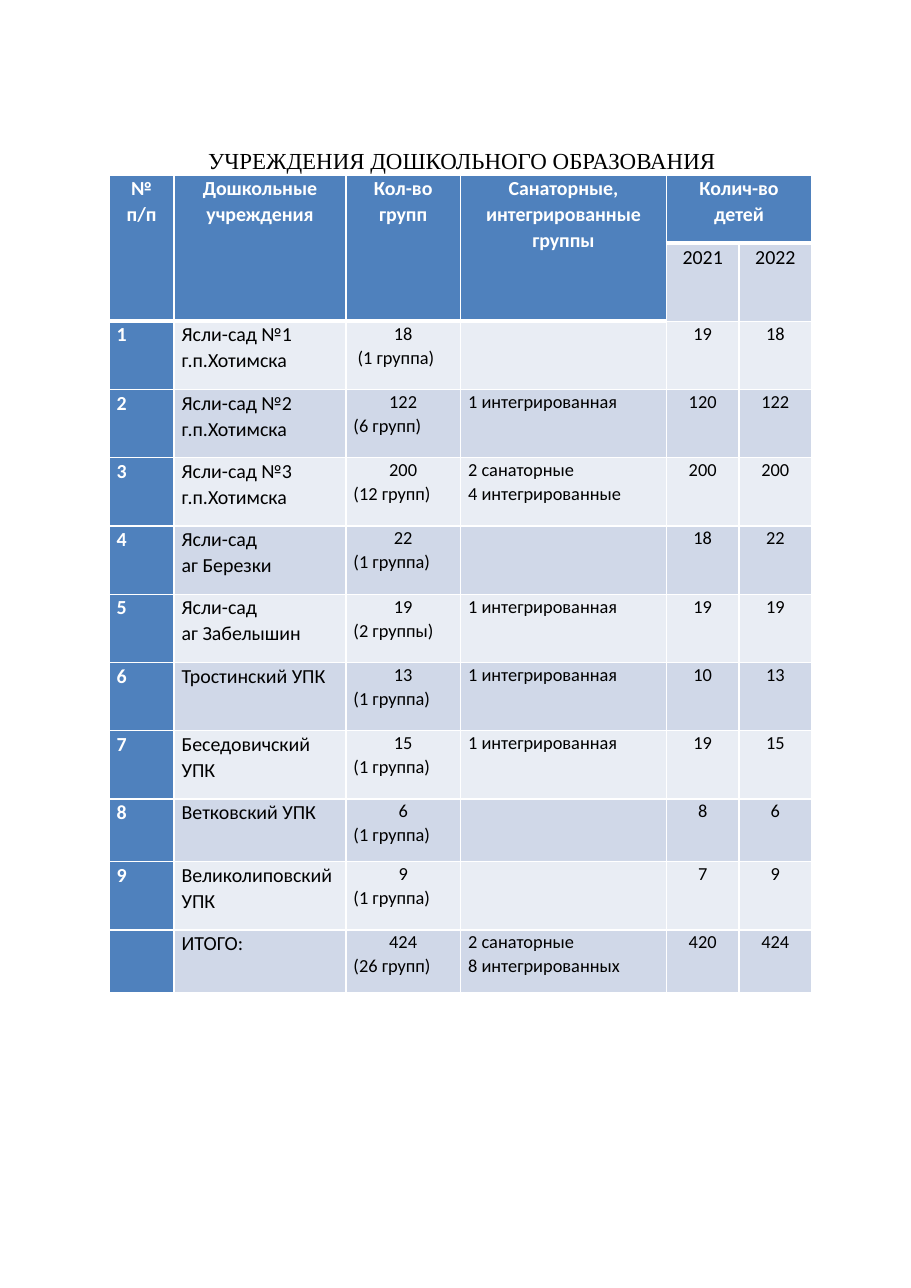
from lxml.etree import SubElement
from pptx import Presentation
from pptx.dml.color import RGBColor
from pptx.enum.text import MSO_ANCHOR, PP_ALIGN
from pptx.oxml.ns import qn
from pptx.util import Pt

WHITE = RGBColor(0xFF, 0xFF, 0xFF)
BLACK = RGBColor(0, 0, 0)
BLUE = RGBColor(0x4F, 0x81, 0xBD)
DARK = RGBColor(0xD0, 0xD8, 0xE8)
LIGHT = RGBColor(0xE9, 0xED, 0xF4)
LEFT, MID = PP_ALIGN.LEFT, PP_ALIGN.CENTER

HEADS = ["№ п/п", "Дошкольные учреждения", "Кол-во групп",
         "Санаторные, интегрированные группы", "Колич-во детей"]
YEARS = ["2021", "2022"]
ROWS = [
    ("1", "Ясли-сад №1 г.п.Хотимска", "18", " (1 группа)", "", "19"),
    ("2", "Ясли-сад №2 г.п.Хотимска", "122", "(6 групп)", "1 интегрированная", "120"),
    ("3", "Ясли-сад №3 г.п.Хотимска", "200", "(12 групп)",
     "2 санаторные\n4 интегрированные", "200"),
    ("4", "Ясли-сад\nаг Березки", "22", "(1 группа)", "", "18"),
    ("5", "Ясли-сад\nаг Забелышин", "19", "(2 группы)", "1 интегрированная", "19"),
    ("6", "Тростинский УПК", "13", "(1 группа)", "1 интегрированная", "10"),
    ("7", "Беседовичский УПК", "15", "(1 группа)", "1 интегрированная", "19"),
    ("8", "Ветковский УПК", "6", "(1 группа)", "", "8"),
    ("9", "Великолиповский УПК", "9", "(1 группа)", "", "7"),
    ("", "ИТОГО:", "424", "(26 групп)", "2 санаторные\n8 интегрированных", "420"),
]
WIDTHS = [42.5, 112.3, 74.9, 134.6, 47.5, 47.5]
HEIGHTS = [44.6, 50.4] + [44.6] * 7 + [41, 44.6, 41]


class Page:
    font = "Calibri"

    def __init__(self, deck):
        self.slide = deck.slides.add_slide(deck.slide_layouts[6])

    def apply(self, item, form):
        for name, value in form.items():
            setattr(item, name, value)

    def label(self, par, text, size, color=BLACK, bold=False, font=None):
        run = par.add_run()
        run.text = text
        self.apply(run.font, {"name": font or self.font, "size": Pt(size), "bold": bold})
        run.font.color.rgb = color

    def title(self, text, left, top, width, height):
        box = self.slide.shapes.add_textbox(Pt(left), Pt(top), Pt(width), Pt(height))
        frame = box.text_frame
        self.apply(frame, {"word_wrap": True, "vertical_anchor": MSO_ANCHOR.TOP,
                           "margin_left": Pt(42.5), "margin_top": Pt(4.7)})
        self.label(frame.paragraphs[0], text, 15, font="Times New Roman")

    def table(self, left, top, widths, heights):
        grid = self.slide.shapes.add_table(
            len(heights), len(widths), Pt(left), Pt(top),
            Pt(sum(widths)), Pt(sum(heights))).table
        for col, width in zip(grid.columns, widths):
            col.width = Pt(width)
        for row, height in zip(grid.rows, heights):
            row.height = Pt(height)
        return grid

    def edge(self, cell, **widths):
        props = cell._tc.get_or_add_tcPr()
        for side in "LRTB":
            line = SubElement(props, qn("a:ln" + side), w=str(Pt(widths.get(side, 1))))
            fill = SubElement(line, qn("a:solidFill"))
            SubElement(fill, qn("a:srgbClr"), val=str(WHITE))

    def cell(self, cell, fill, lines, aligns=(LEFT,), size=13, **style):
        self.apply(cell, {"margin_left": Pt(5), "margin_right": Pt(5),
                          "margin_top": 0, "margin_bottom": 0})
        cell.fill.solid()
        cell.fill.fore_color.rgb = fill
        frame = cell.text_frame
        for i, text in enumerate(lines):
            par = frame.add_paragraph() if i else frame.paragraphs[0]
            self.apply(par, {"alignment": aligns[min(i, len(aligns) - 1)],
                             "line_spacing": 1.07})
            if text:
                self.label(par, text, size, **style)


def main():
    deck = Presentation()
    deck.slide_width, deck.slide_height = Pt(595.44), Pt(841.68)
    page = Page(deck)
    grid = page.table(71.3, 114.5, WIDTHS, HEIGHTS)
    white = {"color": WHITE, "bold": True}

    for r in range(len(HEIGHTS)):
        for c in range(len(WIDTHS)):
            last = 1 if c < 4 else 0
            page.edge(grid.cell(r, c), B=3 if r <= last else 1,
                      T=3 if r == last + 1 else 1)
    for c, text in enumerate(HEADS):
        end = grid.cell(1, c) if c < 4 else grid.cell(0, 5)
        grid.cell(0, c).merge(end)
        page.cell(grid.cell(0, c), BLUE, [text], (MID,), **white)
    for c, year in enumerate(YEARS, 4):
        page.cell(grid.cell(1, c), DARK, [year], (MID,))

    for r, (num, name, count, groups, kinds, past) in enumerate(ROWS, 2):
        band = DARK if r % 2 else LIGHT
        page.cell(grid.cell(r, 0), BLUE, [num], **white)
        page.cell(grid.cell(r, 1), band, name.split("\n"))
        page.cell(grid.cell(r, 2), band, [count, groups], (MID, LEFT), 12)
        page.cell(grid.cell(r, 3), band, kinds.split("\n"), size=12)
        for c, text in enumerate([past, count], 4):
            page.cell(grid.cell(r, c), band, [text], (MID,), 12)

    page.title("УЧРЕЖДЕНИЯ ДОШКОЛЬНОГО ОБРАЗОВАНИЯ", 93.6, 91.4, 490, 47.5)
    deck.save("out.pptx")


if __name__ == "__main__":
    main()
